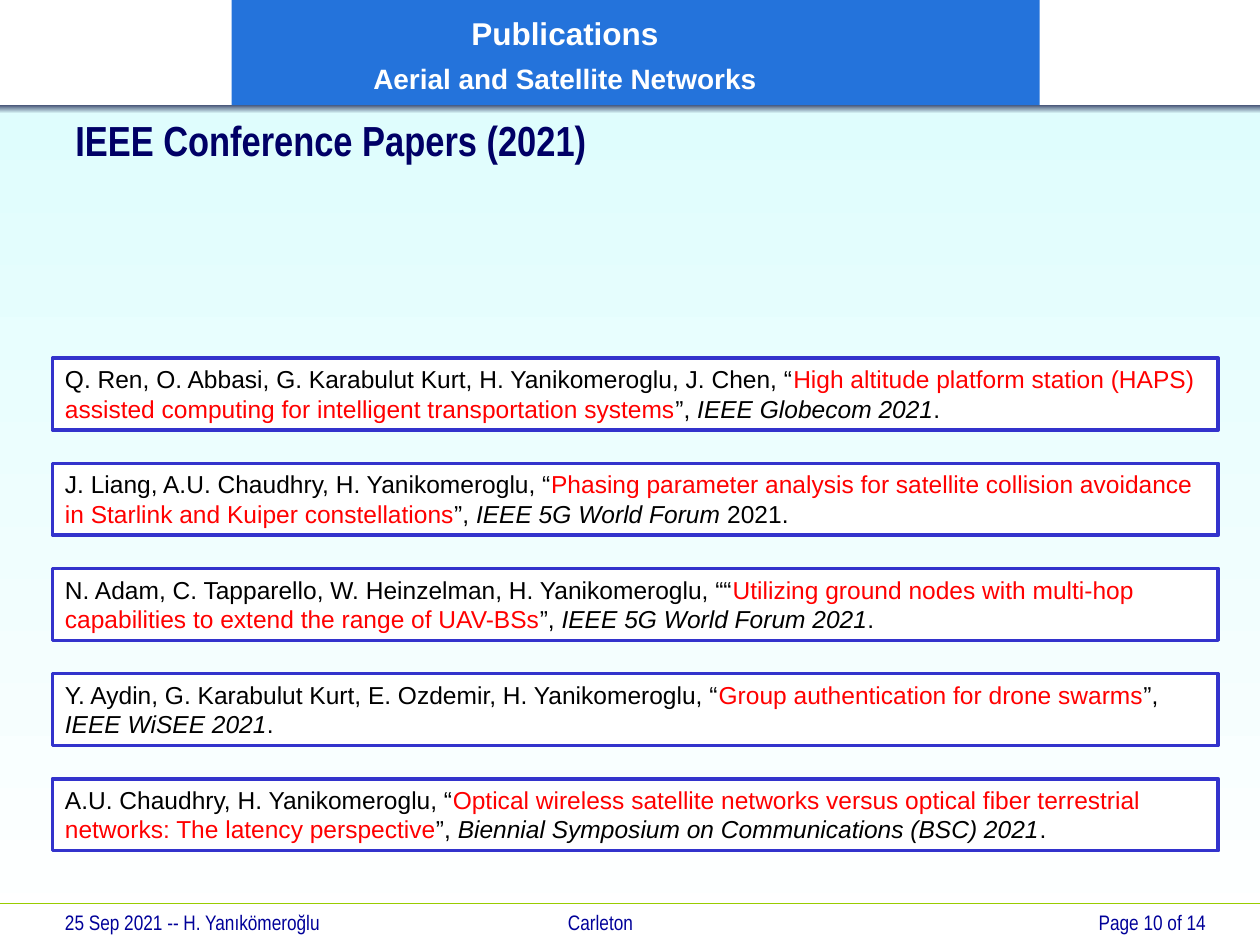
from lxml import etree
from pptx import Presentation
from pptx.dml.color import RGBColor
from pptx.enum.shapes import MSO_CONNECTOR, MSO_SHAPE
from pptx.enum.text import MSO_ANCHOR, PP_ALIGN
from pptx.oxml.ns import qn
from pptx.util import Cm, Pt

RECTANGLE = MSO_SHAPE.RECTANGLE
STRAIGHT = MSO_CONNECTOR.STRAIGHT
LEFT, CENTER, RIGHT = PP_ALIGN.LEFT, PP_ALIGN.CENTER, PP_ALIGN.RIGHT
TOP, MIDDLE = MSO_ANCHOR.TOP, MSO_ANCHOR.MIDDLE

THEME = {
    "white": RGBColor.from_string("FFFFFF"),
    "black": RGBColor.from_string("000000"),
    "red": RGBColor.from_string("FF0000"),
    "sky": RGBColor.from_string("DFFDFD"),
    "slate": RGBColor.from_string("475577"),
    "banner": RGBColor.from_string("2473DB"),
    "border": RGBColor.from_string("3333CC"),
    "green": RGBColor.from_string("99CC00"),
    "navy": RGBColor.from_string("000066"),
    "footer": RGBColor.from_string("000099"),
    "sans": "Arial",
    "narrow": "Arial Narrow",
    "title_size": Pt(24),
    "banner_size": Pt(18),
    "subtitle_size": Pt(16),
    "paper_size": Pt(14),
    "footer_size": Pt(12),
}


def add_box(shapes, bounds, fill=None, anchor=TOP):
    """Add a rectangle; a list of two colours makes a gradient from top to bottom."""
    shape = shapes.add_shape(RECTANGLE, *[Cm(length) for length in bounds])
    shape.shadow.inherit = False
    shape.line.fill.background()
    if fill is None:
        shape.fill.background()
    elif isinstance(fill, list):
        shape.fill.gradient()
        shape.fill.gradient_angle = 270
        for stop, color in zip(shape.fill.gradient_stops, fill):
            stop.color.rgb = color
    else:
        shape.fill.solid()
        shape.fill.fore_color.rgb = fill
    shape.text_frame.word_wrap = True
    shape.text_frame.vertical_anchor = anchor
    return shape


def add_run(paragraph, text, color, **formats):
    run = paragraph.add_run()
    run.text = text
    run.font.color.rgb = color
    for name, value in formats.items():
        setattr(run.font, name, value)


presentation = Presentation()
presentation.slide_width = Cm(25.4)
presentation.slide_height = Cm(19.05)
slide = presentation.slides.add_slide(presentation.slide_layouts[6])
shapes = slide.shapes

# Background
add_box(shapes, (0, 2.18, 25.4, 16.87), [THEME["sky"], THEME["white"]])

# Footer
footer_line = shapes.add_connector(STRAIGHT, 0, Cm(18.21), Cm(25.4), Cm(18.21))
footer_line.line.color.rgb = THEME["green"]
footer_line.line.width = Pt(0.75)
etree.SubElement(footer_line._element.spPr, qn("a:effectLst"))

footer_format = {"name": THEME["narrow"], "size": THEME["footer_size"]}
for bounds, text, alignment in (
    ((1.06, 18.21, 15.88, 0.84), "25 Sep 2021 -- H. Yanıkömeroğlu\tCarleton", LEFT),
    ((19.05, 18.21, 5.51, 0.64), "Page 10 of 14", RIGHT),
):
    paragraph = add_box(shapes, bounds).text_frame.paragraphs[0]
    paragraph.alignment = alignment
    if "\t" in text:
        tabs = etree.SubElement(paragraph._p.get_or_add_pPr(), qn("a:tabLst"))
        etree.SubElement(tabs, qn("a:tab"), pos=str(Cm(10.14)), algn="l")
    add_run(paragraph, text, THEME["footer"], **footer_format)

# Header
add_box(shapes, (0, 2.12, 25.4, 0.17), [THEME["slate"], THEME["sky"]])
banner = add_box(shapes, (4.67, 0, 16.29, 2.12), THEME["banner"], MIDDLE)
banner.text_frame.margin_right = Cm(3.1)
paragraph = banner.text_frame.paragraphs[0]
subtitle = banner.text_frame.add_paragraph()
subtitle.space_before = Pt(4)
for line, text, size in (
    (paragraph, "Publications", THEME["banner_size"]),
    (subtitle, "Aerial and Satellite Networks", THEME["subtitle_size"]),
):
    line.alignment = CENTER
    line.line_spacing = 1.1
    add_run(line, text, THEME["white"], name=THEME["sans"], size=size, bold=True)

# Title
title = add_box(shapes, (1.27, 2.29, 21.79, 1.06), anchor=MIDDLE)
paragraph = title.text_frame.paragraphs[0]
paragraph.alignment = LEFT
add_run(paragraph, "IEEE Conference Papers (2021)", THEME["navy"],
        name=THEME["narrow"], size=THEME["title_size"], bold=True)

# Papers: authors, title, venue, ending
papers = (
    ("Q. Ren, O. Abbasi, G. Karabulut Kurt, H. Yanikomeroglu, J. Chen, “",
     "High altitude platform station (HAPS) assisted computing for intelligent "
     "transportation systems", "IEEE Globecom 2021", "."),
    ("J. Liang, A.U. Chaudhry, H. Yanikomeroglu, “",
     "Phasing parameter analysis for satellite collision avoidance in Starlink "
     "and Kuiper constellations", "IEEE 5G World Forum ", "2021."),
    ("N. Adam, C. Tapparello, W. Heinzelman, H. Yanikomeroglu, ““",
     "Utilizing ground nodes with multi-hop capabilities to extend the range of "
     "UAV-BSs", "IEEE 5G World Forum 2021", "."),
    ("Y. Aydin, G. Karabulut Kurt, E. Ozdemir, H. Yanikomeroglu, “",
     "Group authentication for drone swarms", "IEEE WiSEE 2021", "."),
    ("A.U. Chaudhry, H. Yanikomeroglu, “",
     "Optical wireless satellite networks versus optical fiber terrestrial "
     "networks: The latency perspective",
     "Biennial Symposium on Communications (BSC) 2021", "."),
)
paper_format = {"name": THEME["sans"], "size": THEME["paper_size"]}
first_top, step = 7.22, 2.12
for row, (authors, paper_title, venue, ending) in enumerate(papers):
    box = add_box(shapes, (1.06, first_top + row * step, 23.5, 1.45), THEME["white"])
    box.line.color.rgb = THEME["border"]
    box.line.width = Pt(2)
    paragraph = box.text_frame.paragraphs[0]
    paragraph.alignment = LEFT
    for text, color, italic in (
        (authors, THEME["black"], False),
        (paper_title, THEME["red"], False),
        ("”, ", THEME["black"], False),
        (venue, THEME["black"], True),
        (ending, THEME["black"], False),
    ):
        add_run(paragraph, text, color, italic=italic, **paper_format)

presentation.save("out.pptx")
